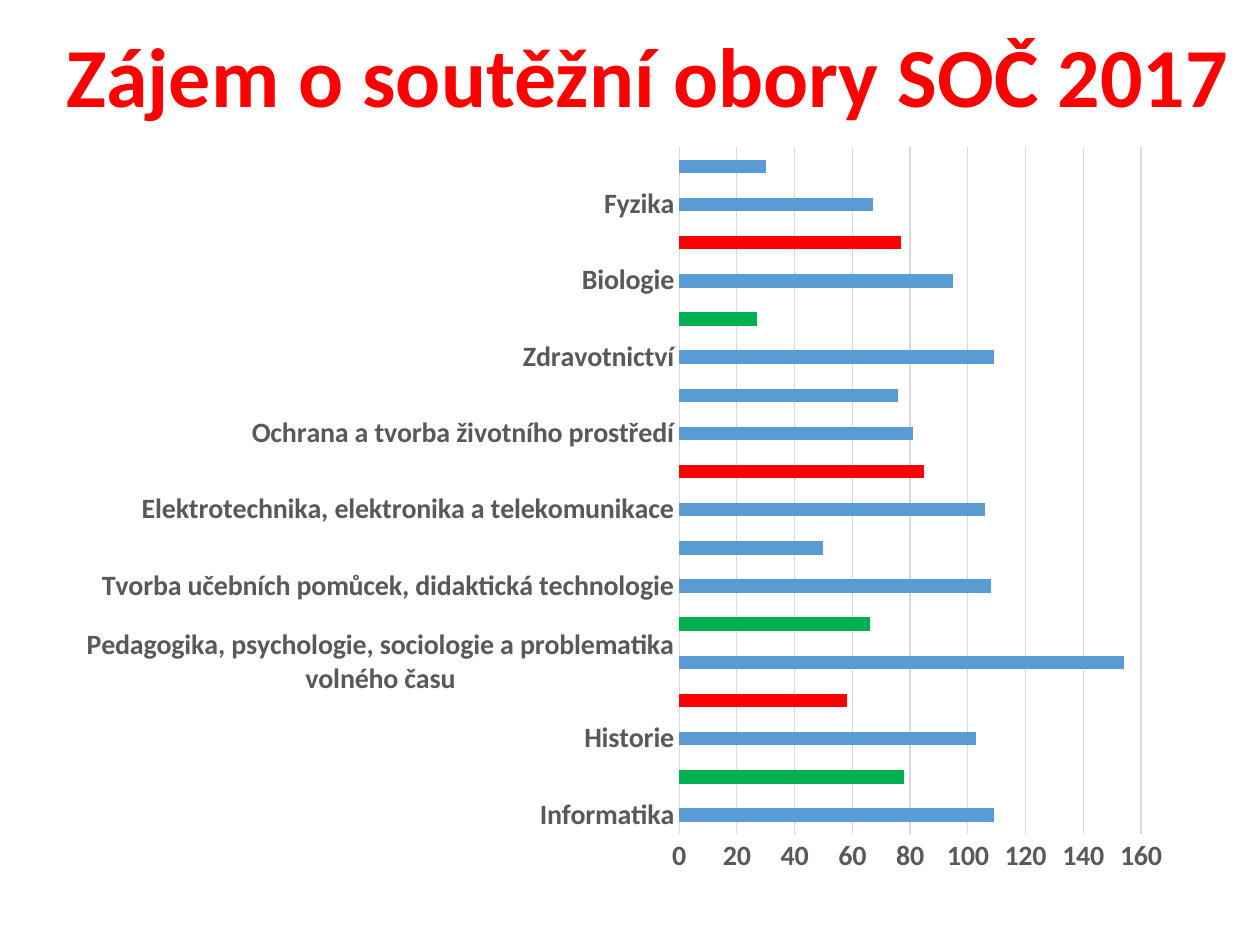
"""Build a slide with a bar chart of interest in the SOČ 2017 competition fields."""
from pptx import Presentation
from pptx.chart.data import CategoryChartData
from pptx.dml.color import RGBColor
from pptx.enum.chart import XL_CHART_TYPE, XL_TICK_MARK
from pptx.enum.text import MSO_AUTO_SIZE, PP_ALIGN
from pptx.util import Inches, Pt

BAR_CLUSTERED = XL_CHART_TYPE.BAR_CLUSTERED
NO_TICK = XL_TICK_MARK.NONE
FIT_SHAPE = MSO_AUTO_SIZE.SHAPE_TO_FIT_TEXT
CENTER = PP_ALIGN.CENTER

RED = RGBColor(0xFF, 0x00, 0x00)
GREEN = RGBColor(0x00, 0xB0, 0x50)
BLUE = RGBColor(0x5B, 0x9B, 0xD5)
GRAY = RGBColor(0x59, 0x59, 0x59)
LIGHT_GRAY = RGBColor(0xD9, 0xD9, 0xD9)
BLACK = RGBColor(0x00, 0x00, 0x00)
FONT_NAME = "Calibri"

FIELDS = [
    ("Informatika", 109, BLUE),
    ("", 78, GREEN),
    ("Historie", 103, BLUE),
    ("", 58, RED),
    ("Pedagogika, psychologie, sociologie a problematika volného času", 154, BLUE),
    ("", 66, GREEN),
    ("Tvorba učebních pomůcek, didaktická technologie", 108, BLUE),
    ("", 50, BLUE),
    ("Elektrotechnika, elektronika a telekomunikace", 106, BLUE),
    ("", 85, RED),
    ("Ochrana a tvorba životního prostředí", 81, BLUE),
    ("", 76, BLUE),
    ("Zdravotnictví", 109, BLUE),
    ("", 27, GREEN),
    ("Biologie", 95, BLUE),
    ("", 77, RED),
    ("Fyzika", 67, BLUE),
    ("", 30, BLUE),
]


def format_font(font, size, color, bold=False):
    font.name = FONT_NAME
    font.size = Pt(size)
    font.bold = bold
    font.color.rgb = color


def write_text(text_frame, text, size, color, bold=False, alignment=CENTER):
    paragraph = text_frame.paragraphs[0]
    paragraph.alignment = alignment
    run = paragraph.add_run()
    run.text = text
    format_font(run.font, size, color, bold)


presentation = Presentation()
presentation.slide_width = Inches(10)
presentation.slide_height = Inches(7.5)
slide = presentation.slides.add_slide(presentation.slide_layouts[6])

title = slide.shapes.add_textbox(Inches(0.28), Inches(0.14), Inches(9.72), Inches(0.91))
title.text_frame.word_wrap = True
title.text_frame.auto_size = FIT_SHAPE
write_text(title.text_frame, "Zájem o soutěžní obory SOČ 2017", size=48, color=RED, bold=True)

names, values, colors = zip(*FIELDS)
chart_data = CategoryChartData()
chart_data.categories = names
chart_data.add_series("Series 1", values)
chart = slide.shapes.add_chart(
    BAR_CLUSTERED, Inches(0.51), Inches(1.05), Inches(8.89), Inches(6), chart_data
).chart
chart.has_legend = False
chart.has_title = False
format_font(chart.font, 10, BLACK)

plot = chart.plots[0]
plot.gap_width = 182
plot.vary_by_categories = False
series = plot.series[0]
series.invert_if_negative = False
series.format.fill.solid()
series.format.fill.fore_color.rgb = BLUE
for index, color in enumerate(colors):
    if color != BLUE:
        fill = series.points[index].format.fill
        fill.solid()
        fill.fore_color.rgb = color

category_axis, value_axis = chart.category_axis, chart.value_axis
for axis in (category_axis, value_axis):
    axis.major_tick_mark = NO_TICK
    axis.minor_tick_mark = NO_TICK
    format_font(axis.tick_labels.font, 16, GRAY, bold=True)

value_axis.minimum_scale = 0
value_axis.maximum_scale = 160
value_axis.major_unit = 20
value_axis.has_major_gridlines = True
value_axis.format.line.fill.background()
for line in (category_axis.format.line, value_axis.major_gridlines.format.line):
    line.color.rgb = LIGHT_GRAY
    line.width = Pt(0.75)

presentation.save("out.pptx")
